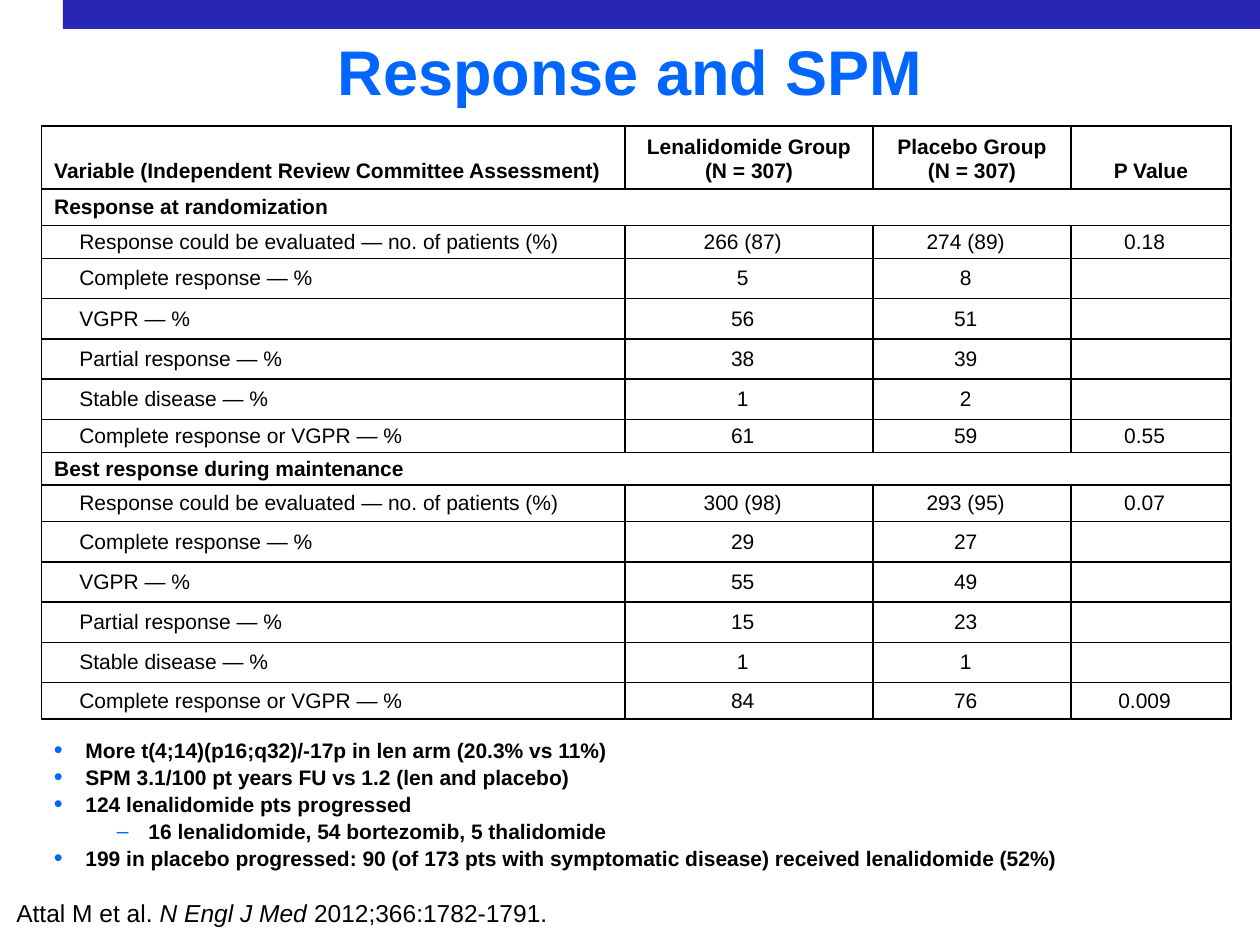
from lxml.etree import SubElement
from pptx import Presentation
from pptx.dml.color import RGBColor
from pptx.enum.shapes import MSO_SHAPE
from pptx.enum.text import MSO_ANCHOR, PP_ALIGN
from pptx.oxml.ns import qn
from pptx.util import Inches, Pt

BAR = RGBColor(0x27, 0x27, 0xB3)
ACCENT = RGBColor(0x00, 0x66, 0xFF)
BLACK = RGBColor(0, 0, 0)
WHITE = RGBColor(0xFF, 0xFF, 0xFF)

TITLE = "Response and SPM"
HEADER = ("Variable (Independent Review Committee Assessment)",
          "Lenalidomide Group\n(N = 307)", "Placebo Group\n(N = 307)", "P Value")
MEASURES = ("Response could be evaluated — no. of patients (%)",
            "Complete response — %", "VGPR — %", "Partial response — %",
            "Stable disease — %", "Complete response or VGPR — %")
# Section name, lenalidomide, placebo and P values, one per measure
SECTIONS = [
    ("Response at randomization",
     ("266 (87)", "5", "56", "38", "1", "61"),
     ("274 (89)", "8", "51", "39", "2", "59"),
     ("0.18", "", "", "", "", "0.55")),
    ("Best response during maintenance",
     ("300 (98)", "29", "55", "15", "1", "84"),
     ("293 (95)", "27", "49", "23", "1", "76"),
     ("0.07", "", "", "", "", "0.009")),
]
COL_WIDTHS = (4.63, 1.97, 1.57, 1.27)
ROW_HEIGHTS = (0.47, 0.29, 0.25, *[0.32] * 4, 0.25,
               0.25, 0.29, *[0.32] * 4, 0.29)
# Level, text
BULLETS = [
    (0, "More t(4;14)(p16;q32)/-17p in len arm (20.3% vs 11%)"),
    (0, "SPM 3.1/100 pt years FU vs 1.2 (len and placebo)"),
    (0, "124 lenalidomide pts progressed"),
    (1, "16 lenalidomide, 54 bortezomib, 5 thalidomide"),
    (0, "199 in placebo progressed: 90 (of 173 pts with symptomatic disease) "
        "received lenalidomide (52%)"),
]
# Text, italic
CITATION = [("Attal M et al. ", False), ("N Engl J Med ", True),
            ("2012;366:1782-1791.", False)]


def add_run(p, text, size, color=BLACK, bold=False, italic=False):
    r = p.add_run()
    r.text = text
    f = r.font
    f.name, f.size, f.bold, f.italic = "Arial", Pt(size), bold, italic
    f.color.rgb = color


def set_margins(obj, left, top, right, bottom):
    obj.margin_left, obj.margin_top = Inches(left), Inches(top)
    obj.margin_right, obj.margin_bottom = Inches(right), Inches(bottom)


def add_text_box(s, *box):
    tf = s.shapes.add_textbox(*map(Inches, box)).text_frame
    tf.word_wrap = True
    tf.vertical_anchor = MSO_ANCHOR.MIDDLE
    return tf


def add_borders(cell):
    tcPr = cell._tc.get_or_add_tcPr()
    for i, side in enumerate(("lnL", "lnR", "lnT", "lnB")):
        ln = tcPr.makeelement(qn("a:" + side), {"w": str(Pt(1))})
        fill = SubElement(ln, qn("a:solidFill"))
        SubElement(fill, qn("a:srgbClr"), val=str(BLACK))
        tcPr.insert(i, ln)


def fill_cell(cell, text, margins, bold=False, center=False,
              anchor=MSO_ANCHOR.MIDDLE):
    set_margins(cell, *(margins if text else (0, 0, 0, 0)))
    cell.vertical_anchor = anchor
    p = cell.text_frame.paragraphs[0]
    if center:
        p.alignment = PP_ALIGN.CENTER
    for i, line in enumerate(text.split("\n") if text else ()):
        if i:
            p.add_line_break()
        add_run(p, line, 12, bold=bold)


def add_response_table(s):
    table = s.shapes.add_table(
        len(ROW_HEIGHTS), len(COL_WIDTHS), Inches(0.33), Inches(1),
        Inches(sum(COL_WIDTHS)), Inches(sum(ROW_HEIGHTS))).table
    for col, w in zip(table.columns, COL_WIDTHS):
        col.width = Inches(w)
    for row, h in zip(table.rows, ROW_HEIGHTS):
        row.height = Inches(h)
    for cell in table.iter_cells():
        cell.fill.solid()
        cell.fill.fore_color.rgb = WHITE
        add_borders(cell)

    for c, text in enumerate(HEADER):
        fill_cell(table.cell(0, c), text, (0.1, 0.05, 0.1, 0.05), bold=True,
                  center=c > 0, anchor=MSO_ANCHOR.BOTTOM)
    row = 1
    for name, *groups in SECTIONS:
        table.cell(row, 0).merge(table.cell(row, len(COL_WIDTHS) - 1))
        fill_cell(table.cell(row, 0), name, (0.1, 0.03, 0.1, 0.03), bold=True)
        for row, (label, *values) in enumerate(zip(MEASURES, *groups), row + 1):
            fill_cell(table.cell(row, 0), label, (0.3, 0.02, 0.1, 0.02))
            for c, value in enumerate(values, 1):
                fill_cell(table.cell(row, c), value, (0, 0.03, 0.1, 0.03),
                          center=True)
        row += 1


def add_bullet(p, level):
    p.level = level
    pPr = p._p.get_or_add_pPr()
    pPr.set("marL", str(Inches(0.25 + 0.5 * level)))
    pPr.set("indent", str(Inches(-0.25)))
    color = SubElement(pPr, qn("a:buClr"))
    SubElement(color, qn("a:srgbClr"), val=str(ACCENT))
    if level == 0:
        SubElement(pPr, qn("a:buSzPct"), val="120000")
    SubElement(pPr, qn("a:buFont"), typeface="Arial")
    SubElement(pPr, qn("a:buChar"), char="•–"[level])
    p.line_spacing = Pt(15.4)


def main():
    prs = Presentation()
    prs.slide_width, prs.slide_height = Inches(10), Inches(7.5)
    s = prs.slides.add_slide(prs.slide_layouts[6])

    bar = s.shapes.add_shape(MSO_SHAPE.RECTANGLE, Inches(0.5), 0,
                             Inches(9.5), Inches(0.23))
    bar.shadow.inherit = False
    bar.fill.solid()
    bar.fill.fore_color.rgb = BAR
    bar.line.fill.background()

    p = add_text_box(s, 0, 0.25, 10, 0.61).paragraphs[0]
    p.alignment = PP_ALIGN.CENTER
    add_run(p, TITLE, 36, ACCENT, bold=True)

    add_response_table(s)

    tf = add_text_box(s, 0.33, 5.75, 8.67, 1.25)
    for i, (level, text) in enumerate(BULLETS):
        p = tf.add_paragraph() if i else tf.paragraphs[0]
        add_bullet(p, level)
        add_run(p, text, 12, bold=True)

    tf = add_text_box(s, 0.13, 7.08, 4.7, 0.35)
    set_margins(tf, 0, 0.01, 0, 0)
    p = tf.paragraphs[0]
    p.line_spacing = 0.93
    for text, italic in CITATION:
        add_run(p, text, 14, italic=italic)

    prs.save("out.pptx")


if __name__ == "__main__":
    main()
